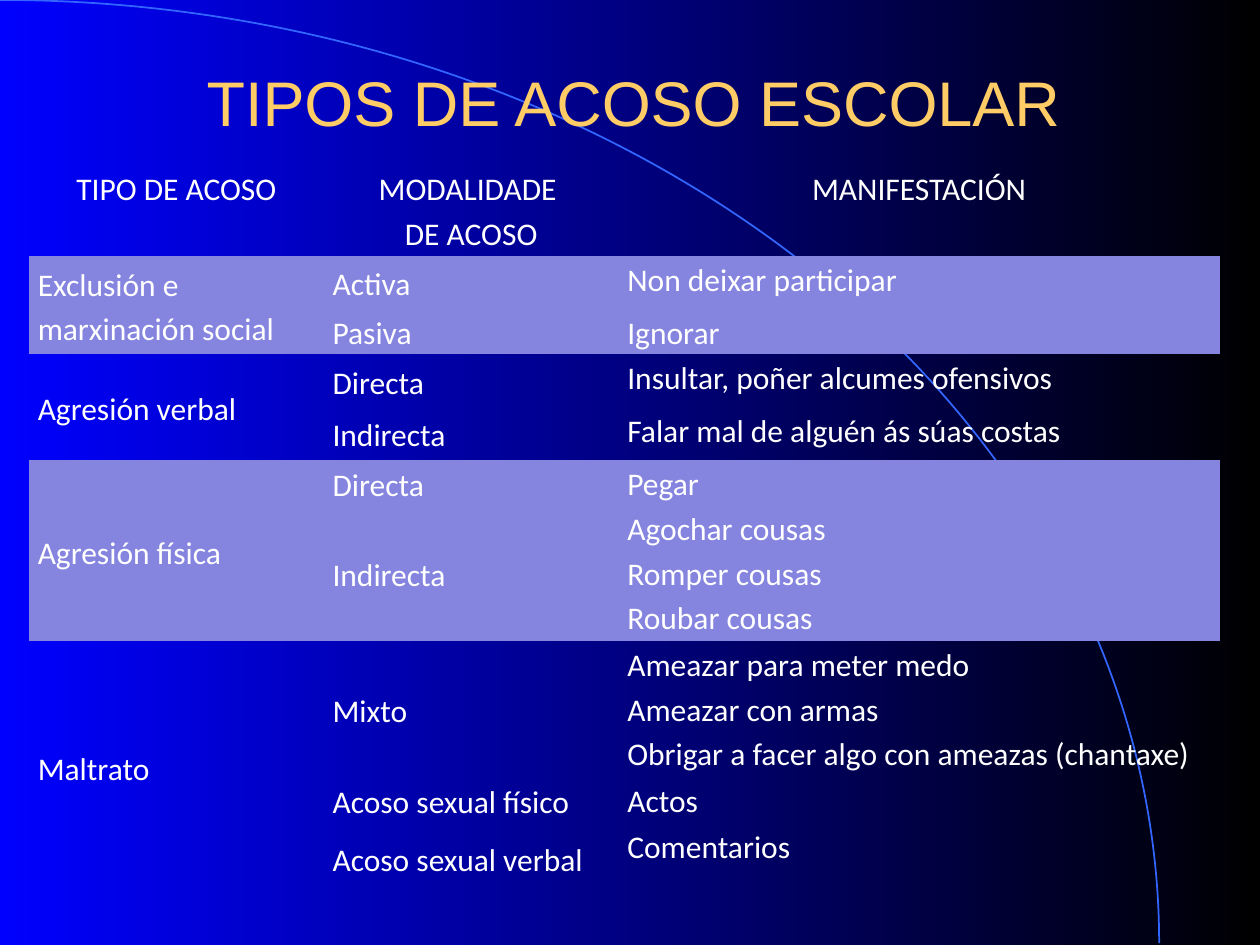
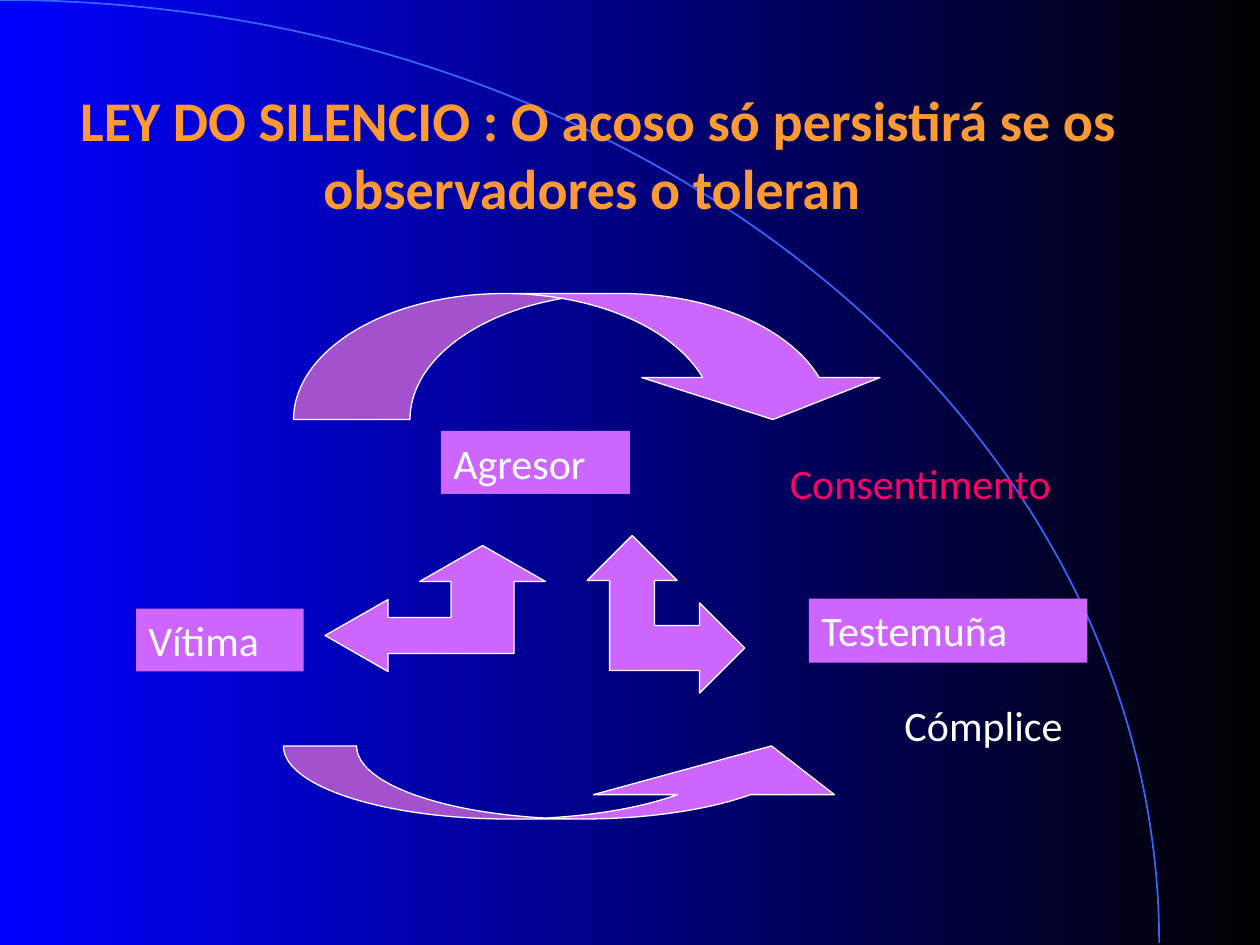
from dataclasses import dataclass

from pptx import Presentation
from pptx.dml.color import RGBColor
from pptx.dml.fill import FillFormat
from pptx.enum.shapes import MSO_SHAPE
from pptx.enum.text import MSO_ANCHOR, MSO_AUTO_SIZE, PP_ALIGN
from pptx.oxml.ns import qn
from pptx.presentation import Presentation as Deck
from pptx.shapes.base import BaseShape
from pptx.slide import Slide
from pptx.table import _Cell as Cell
from pptx.text.text import TextFrame
from pptx.util import Inches, Pt

BLACK, WHITE, BLUE = "000000", "FFFFFF", "0000FF"
ARC_BLUE, BAND, VIOLET = "3366FF", "8585E0", "CC66FF"
GOLD, ORANGE, PINK = "FFCC66", "FF9933", "FF0066"
NO_STYLE = "{2D5ABB26-0587-4C30-8999-92F81FD0307C}"


@dataclass
class Font:
    size: float
    color: str
    name: str = "Calibri"
    bold: bool = False


@dataclass
class Box:
    left: float
    top: float
    width: float
    height: float

    def emu(self) -> tuple:
        return tuple(Inches(v) for v in (self.left, self.top, self.width, self.height))


@dataclass
class Mode:
    name: str
    signs: str
    height: float


@dataclass
class Bullying:
    name: str
    modes: list[Mode]
    banded: bool


@dataclass
class Label:
    text: str
    box: Box
    color: str = WHITE
    fill: str | None = VIOLET


@dataclass
class CurvedArrow:
    kind: MSO_SHAPE
    box: Box
    adjustments: tuple


@dataclass
class CornerArrow:
    box: Box
    mirrored: bool


HEADER = Mode("MODALIDADE \nDE ACOSO", "MANIFESTACIÓN", 0.72)
COLUMNS = (2.34, 2.34, 4.77)
TYPES = [
    Bullying("Exclusión e\nmarxinación social", [
        Mode("Activa", "Non deixar participar", 0.42),
        Mode("Pasiva", "Ignorar", 0.36)], True),
    Bullying("Agresión verbal", [
        Mode("Directa", "Insultar, poñer alcumes ofensivos", 0.42),
        Mode("Indirecta", "Falar mal de alguén ás súas costas", 0.42)], False),
    Bullying("Agresión física", [
        Mode("Directa", "Pegar", 0.36),
        Mode("Indirecta", "Agochar cousas\nRomper cousas\nRoubar cousas", 1.08)], True),
    Bullying("Maltrato", [
        Mode("Mixto", "Ameazar para meter medo\nAmeazar con armas\n"
             "Obrigar a facer algo con ameazas (chantaxe)", 1.08),
        Mode("Acoso sexual físico", "Actos", 0.36),
        Mode("Acoso sexual verbal", "Comentarios", 0.56)], False),
]

LABELS = [
    Label("Agresor", Box(3.5, 3.42, 1.5, 0.5)),
    Label("Vítima", Box(1.08, 4.83, 1.33, 0.5)),
    Label("Testemuña", Box(6.42, 4.75, 2.21, 0.51)),
    Label("Consentimento", Box(6.17, 3.58, 2.33, 0.5), PINK, None),
    Label("Cómplice", Box(7.08, 5.5, 1.92, 0.5), WHITE, None),
]
CURVED_ARROWS = [
    CurvedArrow(MSO_SHAPE.CURVED_DOWN_ARROW, Box(2.33, 2.33, 4.75, 1), (0.924, 1.891, 0.333)),
    CurvedArrow(MSO_SHAPE.CURVED_UP_ARROW, Box(2.25, 5.92, 4.83, 0.58), (1.611, 3.299, 0.667)),
]
CORNER_ARROWS = [
    CornerArrow(Box(2.58, 4.33, 1.75, 1), False),
    CornerArrow(Box(4.66, 4.25, 1.25, 1.25), True),
]
CORNER_GRID = 7
CORNER_OUTLINE = [(5, 0), (3, 2), (4, 2), (4, 4), (2, 4), (2, 3),
                  (0, 5), (2, 7), (2, 6), (6, 6), (6, 2), (7, 2)]


def rgb(value: str) -> RGBColor:
    return RGBColor.from_string(value)


def set_fill(fill: FillFormat, color: str | None) -> None:
    if color is None:
        fill.background()
    else:
        fill.solid()
        fill.fore_color.rgb = rgb(color)


def set_text(tf: TextFrame, text: str, font: Font, align: PP_ALIGN = PP_ALIGN.LEFT,
             spacing: float = 1.0) -> None:
    tf.text = text
    for p in tf.paragraphs:
        p.alignment = align
        p.line_spacing = spacing
        p.font.size = Pt(font.size)
        p.font.name = font.name
        p.font.bold = font.bold
        p.font.color.rgb = rgb(font.color)


def style_shape(sp: BaseShape, fill: str | None, line: str | None, width: float = 0.75) -> None:
    sp.shadow.inherit = False
    set_fill(sp.fill, fill)
    set_fill(sp.line.fill, line)
    if line:
        sp.line.width = Pt(width)


def set_background(prs: Deck) -> None:
    fill = prs.slide_master.background.fill
    fill.gradient()
    fill.gradient_angle = 180
    for stop, color in zip(fill.gradient_stops, (BLACK, BLUE)):
        stop.color.rgb = rgb(color)


def add_master_arc(prs: Deck, slide: Slide) -> None:
    arc = slide.shapes.add_shape(MSO_SHAPE.ARC, *Box(-9.2, 0, 18.4, 14.97).emu())
    style_shape(arc, None, ARC_BLUE, 1)
    prs.slide_master.shapes.element.insert(2, arc.element)


def add_titled_slide(prs: Deck, text: str, box: Box, font: Font, spacing: float = 1.0) -> Slide:
    slide = prs.slides.add_slide(prs.slide_layouts[5])
    title = slide.shapes.title
    title.left, title.top, title.width, title.height = box.emu()
    tf = title.text_frame
    tf.auto_size = MSO_AUTO_SIZE.NONE
    tf.vertical_anchor = MSO_ANCHOR.MIDDLE
    set_text(tf, text, font, PP_ALIGN.CENTER, spacing)
    return slide


def fill_cell(cell: Cell, text: str, fill: str | None, anchor: MSO_ANCHOR = MSO_ANCHOR.TOP,
              align: PP_ALIGN = PP_ALIGN.LEFT) -> None:
    cell.margin_left = cell.margin_right = Inches(0.07)
    cell.margin_top = cell.margin_bottom = 0
    cell.vertical_anchor = anchor
    set_fill(cell.fill, fill)
    set_text(cell.text_frame, text, Font(18, WHITE), align, 1.15)


def add_types_table(slide: Slide) -> None:
    modes = [HEADER] + [mode for kind in TYPES for mode in kind.modes]
    box = Box(0.23, 1.31, sum(COLUMNS), sum(mode.height for mode in modes))
    table = slide.shapes.add_table(len(modes), len(COLUMNS), *box.emu()).table
    table.first_row = table.horz_banding = False
    table._tbl.tblPr.find(qn("a:tableStyleId")).text = NO_STYLE
    for column, width in zip(table.columns, COLUMNS):
        column.width = Inches(width)
    for row, mode in zip(table.rows, modes):
        row.height = Inches(mode.height)
    for col, text in enumerate(("TIPO DE ACOSO", HEADER.name, HEADER.signs)):
        fill_cell(table.cell(0, col), text, None, align=PP_ALIGN.CENTER)
    first = 1
    for kind in TYPES:
        fill = BAND if kind.banded else None
        last = first + len(kind.modes) - 1
        table.cell(first, 0).merge(table.cell(last, 0))
        fill_cell(table.cell(first, 0), kind.name, fill, MSO_ANCHOR.MIDDLE)
        for row, mode in enumerate(kind.modes, first):
            fill_cell(table.cell(row, 1), mode.name, fill, MSO_ANCHOR.MIDDLE)
            fill_cell(table.cell(row, 2), mode.signs, fill)
        first = last + 1


def add_label(slide: Slide, label: Label) -> None:
    if label.fill:
        sp = slide.shapes.add_shape(MSO_SHAPE.RECTANGLE, *label.box.emu())
        style_shape(sp, label.fill, None)
    else:
        sp = slide.shapes.add_textbox(*label.box.emu())
    tf = sp.text_frame
    tf.word_wrap = True
    tf.vertical_anchor = MSO_ANCHOR.TOP
    set_text(tf, label.text, Font(24, label.color))


def add_curved_arrow(slide: Slide, arrow: CurvedArrow) -> None:
    sp = slide.shapes.add_shape(arrow.kind, *arrow.box.emu())
    for i, value in enumerate(arrow.adjustments):
        sp.adjustments[i] = value
    style_shape(sp, VIOLET, WHITE)


def add_corner_arrow(slide: Slide, arrow: CornerArrow) -> None:
    left, top, width, height = arrow.box.emu()
    points = [(left + width * (CORNER_GRID - x if arrow.mirrored else x) // CORNER_GRID,
               top + height * y // CORNER_GRID) for x, y in CORNER_OUTLINE]
    builder = slide.shapes.build_freeform(*points[0])
    builder.add_line_segments(points[1:], close=True)
    style_shape(builder.convert_to_shape(), VIOLET, WHITE)


def main() -> None:
    prs = Presentation()
    prs.slide_width, prs.slide_height = Inches(10), Inches(7.5)
    set_background(prs)

    types = add_titled_slide(prs, "TIPOS DE ACOSO ESCOLAR", Box(0.78, 0.23, 8.5, 1.21),
                             Font(36, GOLD, "Arial"), 0.93)
    add_master_arc(prs, types)
    add_types_table(types)

    silence = add_titled_slide(
        prs, "LEY DO SILENCIO : O acoso só persistirá se os observadores o toleran ",
        Box(0.5, 0.25, 8.5, 1.93), Font(32, ORANGE, bold=True))
    for arrow in CURVED_ARROWS:
        add_curved_arrow(silence, arrow)
    for arrow in CORNER_ARROWS:
        add_corner_arrow(silence, arrow)
    for label in LABELS:
        add_label(silence, label)

    prs.save("out.pptx")


if __name__ == "__main__":
    main()
